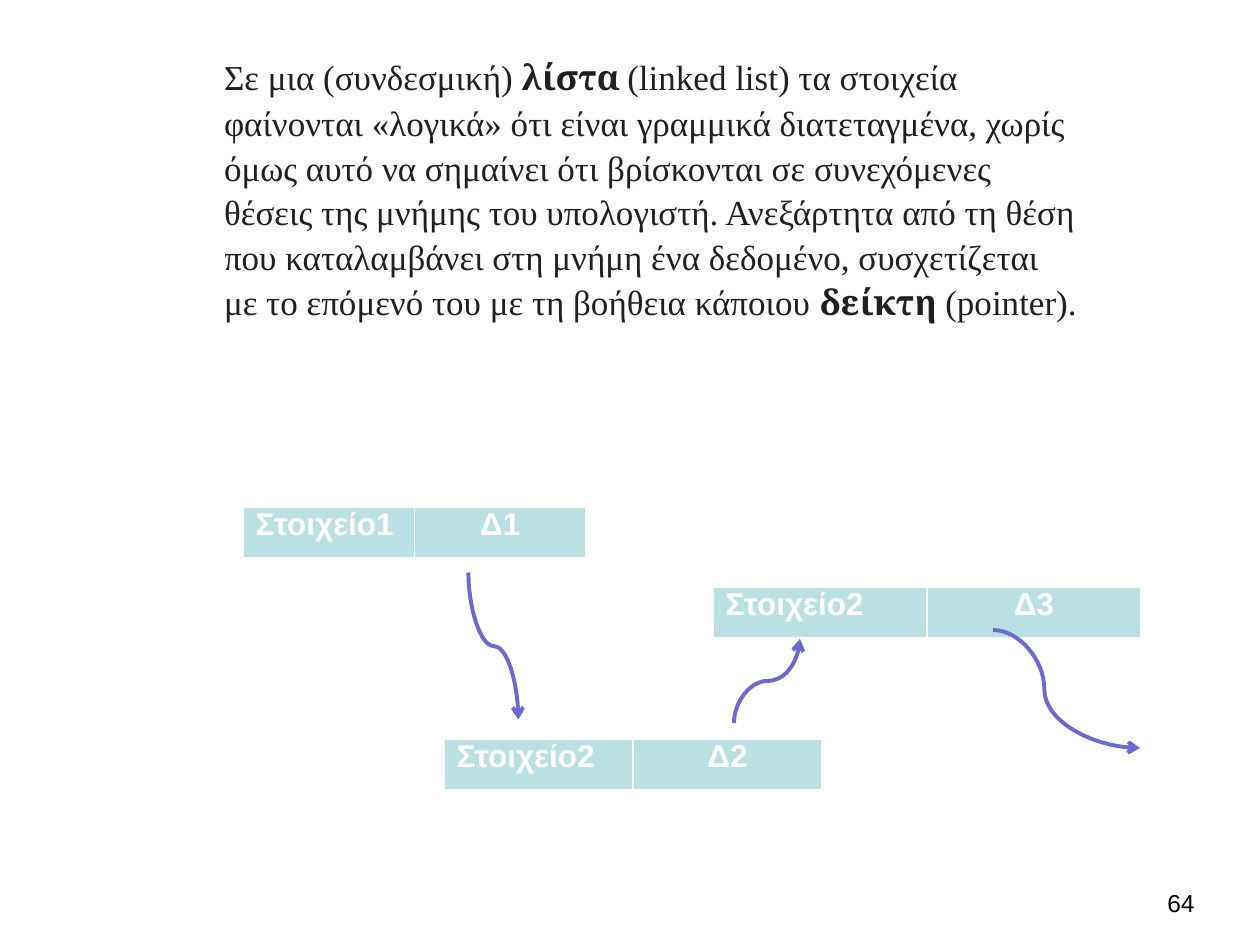
"""Build a slide that explains linked lists with nodes and pointers."""
from lxml import etree
from pptx import Presentation
from pptx.dml.color import RGBColor
from pptx.enum.shapes import MSO_CONNECTOR
from pptx.enum.text import PP_ALIGN
from pptx.oxml.ns import qn
from pptx.util import Pt

CURVE = MSO_CONNECTOR.CURVE
LEFT, MID, RIGHT = PP_ALIGN.LEFT, PP_ALIGN.CENTER, PP_ALIGN.RIGHT
HUES = {"ink": "231F1F", "node": "BBE0E3", "link": "6B6BCF",
        "white": "FFFFFF", "black": "000000"}


def px(*nums):
    return [round(num * 914400 / 126) for num in nums]


def write(para, text, size=18, face="Arial", hue="white", bold=False,
          align=LEFT, space=1.0):
    para.alignment = align
    para.line_spacing = space
    run = para.add_run()
    run.text = text
    run.font.size = Pt(size)
    run.font.name = face
    run.font.bold = bold
    run.font.color.rgb = RGBColor.from_string(HUES[hue])


deck = Presentation()
deck.slide_width, deck.slide_height = px(1260, 945)
slide = deck.slides.add_slide(deck.slide_layouts[6])
shapes = slide.shapes

box = shapes.add_textbox(*px(1018, 882, 189, 63))
box.text_frame.word_wrap = True
write(box.text_frame.paragraphs[0], "64", size=14, hue="black", align=RIGHT)

table = shapes.add_table(1, 1, *px(224, 53, 853, 338)).table
table.first_row = table.horz_banding = False
cell = table.cell(0, 0)
cell.fill.background()
cell.margin_left = cell.margin_right = cell.margin_top = cell.margin_bottom = 0
parts = [
    ("Σε μια (συνδεσμική) ", False),
    ("λίστα ", True),
    ("(linked list) τα στοιχεία φαίνονται «λογικά» ότι είναι γραμμικά "
     "διατεταγμένα, χωρίς όμως αυτό να σημαίνει ότι βρίσκονται σε συνεχόμενες "
     "θέσεις της μνήμης του υπολογιστή. Ανεξάρτητα από τη θέση που "
     "καταλαμβάνει στη μνήμη ένα δεδομένο, συσχετίζεται με το επόμενό του με "
     "τη βοήθεια κάποιου ", False),
    ("δείκτη ", True),
    ("(pointer).", False),
]
for text, bold in parts:
    write(cell.text_frame.paragraphs[0], text, size=20, hue="ink", bold=bold,
          face="Cambria" if bold else "Times New Roman", space=1.15)

nodes = [
    (243, 507, 343, "Στοιχείο1", "Δ1"),
    (444, 739, 378, "Στοιχείο2", "Δ2"),
    (713, 587, 428, "Στοιχείο2", "Δ3"),
]
for left, top, width, item, link in nodes:
    table = shapes.add_table(1, 2, *px(left, top, width, 52)).table
    table.first_row = table.horz_banding = False
    for col, (text, align) in enumerate([(item, LEFT), (link, MID)]):
        cell = table.cell(0, col)
        write(cell.text_frame.paragraphs[0], text, bold=True, align=align,
              space=0.8)
        props = cell._tc.get_or_add_tcPr()
        for side, thick in [("L", 1), ("R", 1), ("T", 1), ("B", 3)]:
            edge = etree.SubElement(props, qn("a:ln" + side), w=str(Pt(thick)))
            fill = etree.SubElement(edge, qn("a:solidFill"))
            etree.SubElement(fill, qn("a:srgbClr"), val=HUES["white"])
        cell.fill.solid()
        cell.fill.fore_color.rgb = RGBColor.from_string(HUES["node"])

links = [
    (725, 648, 84, 66, 90, {"flipH": "1", "flipV": "1"}, 50000),
    (420, 621, 147, 50, 270, {"flipH": "1"}, 50000),
    (993, 630, 147, 118, 0, {}, 34900),
]
for left, top, width, height, turn, flips, bend in links:
    link = shapes.add_connector(
        CURVE, *px(left, top, left + width, top + height))
    link.line.color.rgb = RGBColor.from_string(HUES["link"])
    link.line.width = Pt(2.25)
    props = link._element.spPr
    frame = props.find(qn("a:xfrm"))
    frame.set("rot", str(turn * 60000))
    for name, flag in flips.items():
        frame.set(name, flag)
    guides = props.find(qn("a:prstGeom")).find(qn("a:avLst"))
    etree.SubElement(guides, qn("a:gd"), name="adj1", fmla=f"val {bend}")
    etree.SubElement(props.find(qn("a:ln")), qn("a:tailEnd"), type="arrow")
    etree.SubElement(props, qn("a:effectLst"))

deck.save("out.pptx")
